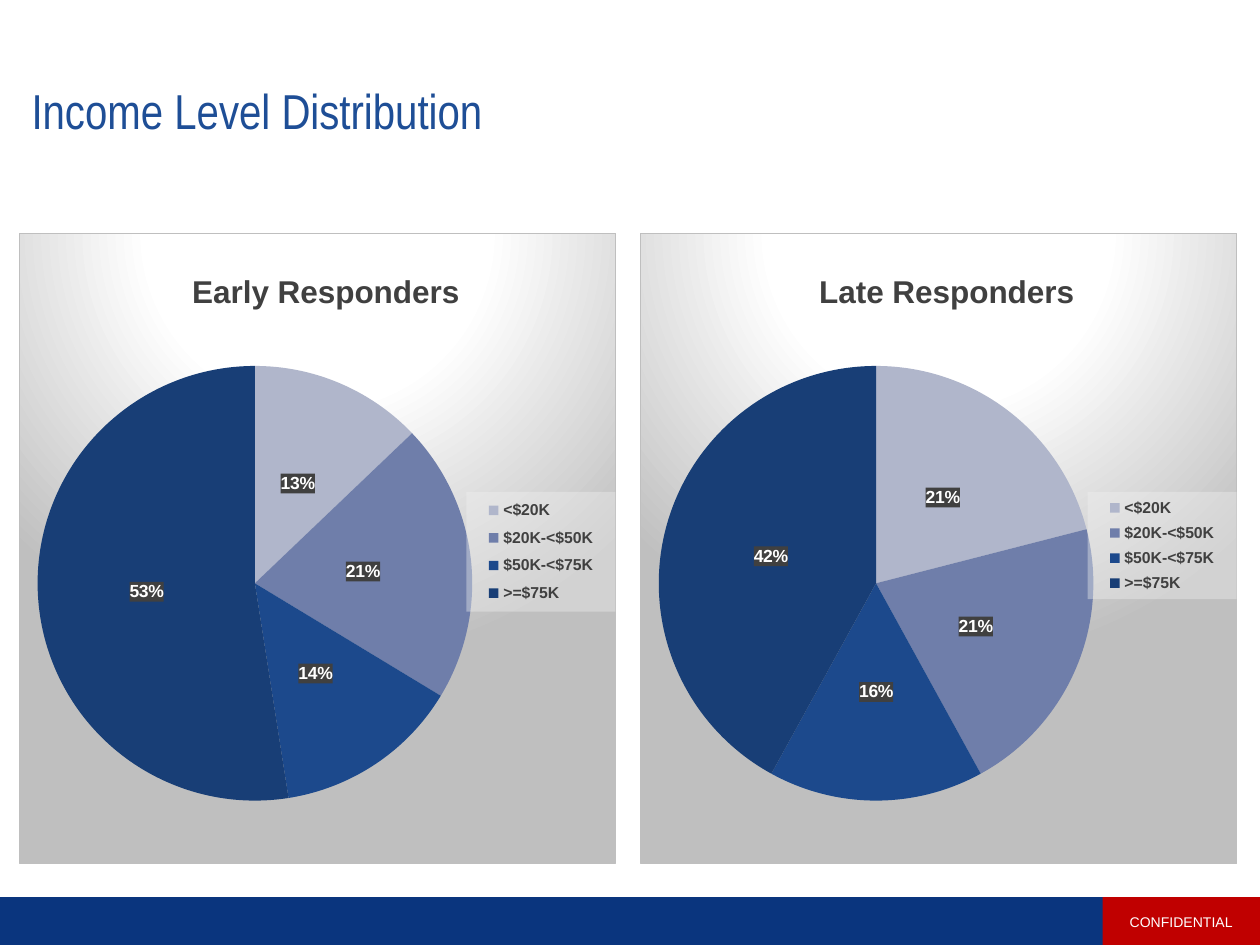
from lxml.etree import SubElement
from pptx import Presentation
from pptx.chart.data import CategoryChartData as ChartData
from pptx.dml.color import RGBColor
from pptx.enum.chart import XL_CHART_TYPE as Kind
from pptx.enum.chart import XL_LABEL_POSITION as Spot
from pptx.enum.chart import XL_LEGEND_POSITION as Side
from pptx.enum.shapes import MSO_SHAPE as Shape
from pptx.enum.text import MSO_ANCHOR as Anchor
from pptx.enum.text import MSO_AUTO_SIZE as Fit
from pptx.enum.text import PP_ALIGN as Align
from pptx.oxml import parse_xml
from pptx.oxml.ns import nsdecls, qn
from pptx.util import Inches, Pt

COLORS = {
    "title": "1E4E96", "band": "0A357E", "tag": "C00000", "white": "FFFFFF",
    "black": "000000", "text": "404040", "edge": "BFBFBF", "key": "F2F2F2",
}
SLICES = ["B0B6CB", "6F7EAA", "1C498C", "183E76"]
LEVELS = ["<$20K", "$20K-<$50K", "$50K-<$75K", ">=$75K"]
# Heading, left edge, shares, heading place, key place
PIES = [
    ("Early Responders", 0.15, (13, 21, 14, 53),
     (0.28, 0.05), (0.75, 0.41, 0.25, 0.19)),
    ("Late Responders", 5.08, (21, 21, 16, 42),
     (0.29, 0.05), (0.75, 0.41, 0.25, 0.17)),
]
PLOT = (0.03, 0.21, 0.73, 0.69)


def color(name):
    return RGBColor.from_string(COLORS[name])


def style(font, size, name, bold=False, face="Arial"):
    font.size, font.bold, font.name = Pt(size), bold, face
    font.color.rgb = color(name)


def add_text(para, text, size, name, bold=False, face="Arial"):
    run = para.add_run()
    run.text = text
    style(run.font, size, name, bold, face)


def add_title(slide, text):
    title = slide.shapes.title
    title.left, title.top = Inches(0.15), Inches(0.2)
    title.width, title.height = Inches(9.67), Inches(1.4)
    frame = title.text_frame
    frame.auto_size = Fit.NONE
    frame.vertical_anchor = Anchor.MIDDLE
    frame.margin_left = frame.margin_top = frame.margin_bottom = Inches(0.1)
    frame.margin_right = Inches(0.2)
    para = frame.paragraphs[0]
    para.alignment, para.line_spacing = Align.LEFT, 0.9
    add_text(para, text, 28, "title", face="Arial Narrow")


def add_bar(slide, left, width, fill):
    bar = slide.shapes.add_shape(
        Shape.RECTANGLE, Inches(left), Inches(7.12), Inches(width), Inches(0.39))
    bar.shadow.inherit = False
    bar.fill.solid()
    bar.fill.fore_color.rgb = color(fill)
    bar.line.fill.background()
    return bar


def add_tag(slide, text):
    frame = add_bar(slide, 8.75, 1.25, "tag").text_frame
    frame.vertical_anchor = Anchor.MIDDLE
    para = frame.paragraphs[0]
    para.alignment, para.space_after = Align.CENTER, Pt(6)
    add_text(para, text, 8, "white")


def make_layout(place, inner=False):
    """Place a chart part by fractions of the chart's size."""
    layout = parse_xml(f"<c:layout {nsdecls('c')}><c:manualLayout/></c:layout>")
    pairs = [("layoutTarget", "inner")] if inner else []
    pairs += [("xMode", "edge"), ("yMode", "edge"), *zip("xywh", place)]
    for tag, val in pairs:
        SubElement(layout[0], qn(f"c:{tag}")).set("val", str(val))
    return layout


def make_fill(name, alpha):
    """Half-clear fill for a chart part."""
    return parse_xml(
        f'<c:spPr {nsdecls("c", "a")}><a:solidFill>'
        f'<a:srgbClr val="{COLORS[name]}"><a:alpha val="{alpha * 1000}"/>'
        '</a:srgbClr></a:solidFill><a:ln><a:noFill/></a:ln></c:spPr>')


def make_panel():
    """Round white-to-grey fade with a thin edge."""
    stops = "".join(
        f'<a:gs pos="{pos * 1000}"><a:srgbClr val="{COLORS[name]}"/></a:gs>'
        for pos, name in [(0, "white"), (39, "white"), (100, "edge")])
    return parse_xml(
        f'<c:spPr {nsdecls("c", "a")}><a:gradFill><a:gsLst>{stops}</a:gsLst>'
        '<a:path path="circle"><a:fillToRect l="50000" t="-80000" r="50000" '
        'b="180000"/></a:path></a:gradFill><a:ln w="9525"><a:solidFill>'
        f'<a:srgbClr val="{COLORS["edge"]}"/></a:solidFill></a:ln></c:spPr>')


def add_labels(plot):
    plot.has_data_labels = True
    labels = plot.data_labels
    labels.show_value = True
    labels.number_format, labels.number_format_is_linked = '0"%"', False
    labels.position = Spot.CENTER
    style(labels.font, 10, "white", True)
    labels._element.find(qn("c:numFmt")).addnext(make_fill("text", 85))


def add_key(chart, place):
    chart.has_legend = True
    key = chart.legend
    key.position, key.include_in_layout = Side.RIGHT, False
    style(key.font, 9, "text", True)
    root = key._element
    for old in root.findall(qn("c:layout")):
        root.remove(old)
    root.find(qn("c:legendPos")).addnext(make_layout(place))
    root.find(qn("c:overlay")).addnext(make_fill("key", 39))


def add_head(chart, text, place):
    chart.has_title = True
    head = chart.chart_title
    add_text(head.text_frame.paragraphs[0], text, 18, "text", True)
    root = head._element
    for old in root.findall(qn("c:layout")):
        root.remove(old)
    root.find(qn("c:tx")).addnext(make_layout(place))


def add_pie(slide, head, left, shares, spot, place):
    data = ChartData()
    data.categories = LEVELS
    data.add_series("Series 1", shares)
    chart = slide.shapes.add_chart(
        Kind.PIE, Inches(left), Inches(1.85), Inches(4.74), Inches(5.01),
        data).chart
    style(chart.font, 10, "black")
    add_head(chart, head, spot)
    add_key(chart, place)

    # Slices
    plot = chart.plots[0]
    plot.vary_by_categories = True
    for i, shade in enumerate(SLICES):
        fill = plot.series[0].points[i].format.fill
        fill.solid()
        fill.fore_color.rgb = RGBColor.from_string(shade)
    add_labels(plot)

    # Panel and plot place
    root = chart._chartSpace.find(qn("c:chart"))
    root.addnext(make_panel())
    area = root.find(qn("c:plotArea"))
    for old in area.findall(qn("c:layout")):
        area.remove(old)
    area.insert(0, make_layout(PLOT, inner=True))


def main():
    deck = Presentation()
    deck.slide_width, deck.slide_height = Inches(10), Inches(7.5)
    slide = deck.slides.add_slide(deck.slide_layouts[5])
    add_title(slide, "Income Level Distribution")
    # Footer
    add_bar(slide, 0, 10, "band")
    add_tag(slide, "CONFIDENTIAL")
    # Charts
    for pie in PIES:
        add_pie(slide, *pie)
    deck.save("out.pptx")


if __name__ == "__main__":
    main()
